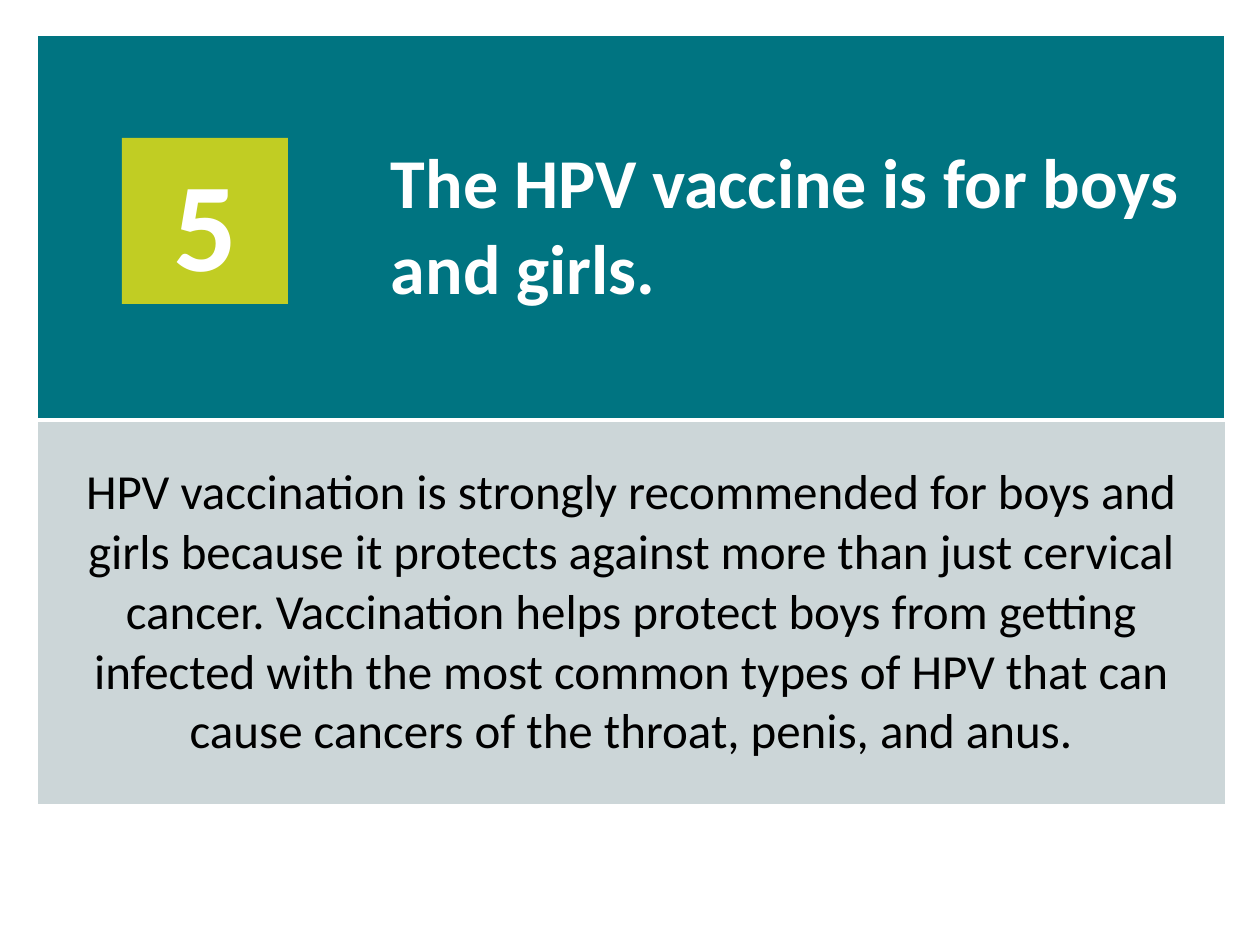
from dataclasses import dataclass
from pptx import Presentation
from pptx.dml.color import RGBColor as RGB
from pptx.enum.shapes import MSO_SHAPE as SHAPE
from pptx.enum.text import MSO_ANCHOR as ANCHOR, PP_ALIGN as ALIGN
from pptx.oxml import parse_xml
from pptx.oxml.ns import nsdecls
from pptx.util import Emu, Pt


@dataclass(frozen=True)
class Theme:
    font: str = "Calibri"
    teal: str = "007481"
    gray: str = "CCD6D8"
    lime: str = "C1CD23"
    white: str = "FFFFFF"
    black: str = "000000"
    title: int = 40
    body: int = 28
    number: int = 72
    thin: int = 1
    thick: int = 3


THEME = Theme()
SCALE = 914400 // 126


def px(n):
    return Emu(n * SCALE)


def write(tf, text, size, color, bold=False, align=ALIGN.LEFT):
    p = tf.paragraphs[0]
    p.alignment = align
    r = p.add_run()
    r.text = text
    r.font.name = THEME.font
    r.font.size = Pt(size)
    r.font.bold = bold
    r.font.color.rgb = RGB.from_string(color)


def style_cell(cell, fill, borders):
    tc_pr = cell._tc.get_or_add_tcPr()
    for side, width in zip("LRTB", borders):
        paint = (f'<a:solidFill><a:srgbClr val="{THEME.white}"/></a:solidFill>'
                 if width else "<a:noFill/>")
        tc_pr.append(parse_xml(
            f'<a:ln{side} {nsdecls("a")} w="{Pt(width)}">{paint}</a:ln{side}>'))
    cell.fill.solid()
    cell.fill.fore_color.rgb = RGB.from_string(fill)
    cell.vertical_anchor = ANCHOR.MIDDLE
    cell.margin_left = cell.margin_right = px(19)
    cell.margin_top = cell.margin_bottom = px(19)


def add_panel(s, title, body):
    widths, height = (335, 853), 385
    table = s.shapes.add_table(2, 2, px(37), px(35), px(sum(widths)), px(2 * height)).table
    table.first_row = table.horz_banding = False
    for col, width in zip(table.columns, widths):
        col.width = px(width)
    for row in table.rows:
        row.height = px(height)
    thin, thick = THEME.thin, THEME.thick
    for row, fill, top, bottom in ((0, THEME.teal, thin, thick), (1, THEME.gray, thick, thin)):
        style_cell(table.cell(row, 0), fill, (thin, 0, top, bottom))
        style_cell(table.cell(row, 1), fill, (0, thin, top, bottom))
    table.cell(1, 0).merge(table.cell(1, 1))
    write(table.cell(0, 1).text_frame, title, THEME.title, THEME.white, bold=True)
    write(table.cell(1, 0).text_frame, body, THEME.body, THEME.black, align=ALIGN.CENTER)


def add_badge(s, number):
    sp = s.shapes.add_shape(SHAPE.RECTANGLE, px(122), px(138), px(166), px(166))
    sp.shadow.inherit = False
    sp.fill.solid()
    sp.fill.fore_color.rgb = RGB.from_string(THEME.lime)
    sp.line.fill.background()
    tf = sp.text_frame
    tf.word_wrap = True
    tf.vertical_anchor = ANCHOR.MIDDLE
    write(tf, number, THEME.number, THEME.white, bold=True, align=ALIGN.CENTER)


def main():
    prs = Presentation()
    prs.slide_width, prs.slide_height = px(1260), px(945)
    s = prs.slides.add_slide(prs.slide_layouts[6])
    add_panel(
        s,
        "The HPV vaccine is for boys and girls.",
        "HPV vaccination is strongly recommended for boys and girls because it "
        "protects against more than just cervical cancer. Vaccination helps protect "
        "boys from getting infected with the most common types of HPV that can cause "
        "cancers of the throat, penis, and anus.",
    )
    add_badge(s, "5")
    prs.save("out.pptx")


if __name__ == "__main__":
    main()
